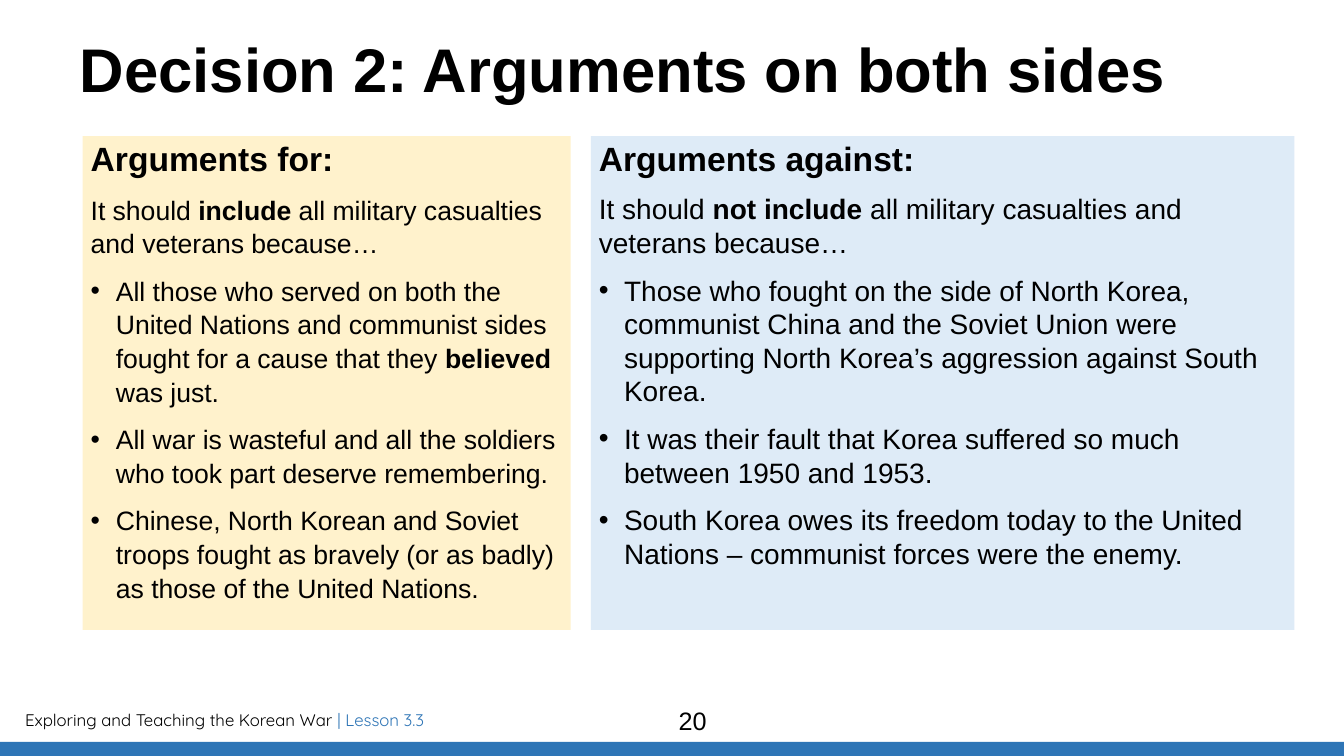
from lxml.etree import SubElement
from pptx import Presentation
from pptx.dml.color import RGBColor
from pptx.enum.shapes import MSO_SHAPE
from pptx.enum.text import MSO_ANCHOR, PP_ALIGN
from pptx.oxml.ns import qn
from pptx.util import Inches, Pt

WIDTH, HEIGHT = Inches(13.33), Inches(7.5)
COLORS = {"text": "000000", "accent": "2E75B6", "for": "FFF2CC", "against": "DEEBF7"}
PANEL_TOP, PANEL_HEIGHT = 18, 65.33
INDENT = Inches(0.25)

FOR_POINTS = [
    "All those who served on both the United Nations and communist sides fought "
    "for a cause that they *believed* was just.",
    "All war is wasteful and all the soldiers who took part deserve remembering.",
    "Chinese, North Korean and Soviet troops fought as bravely (or as badly) as "
    "those of the United Nations.",
]
AGAINST_POINTS = [
    "Those who fought on the side of North Korea, communist China and the Soviet "
    "Union were supporting North Korea’s aggression against South Korea.",
    "It was their fault that Korea suffered so much between 1950 and 1953.",
    "South Korea owes its freedom today to the United Nations – communist forces "
    "were the enemy.",
]


def share(x, y, w, h):
    """Turn percentages of the slide's width and height into lengths."""
    return [int(WIDTH * x / 100), int(HEIGHT * y / 100),
            int(WIDTH * w / 100), int(HEIGHT * h / 100)]


def add_run(p, text, size, font="Arial", color="text", bold=False):
    r = p.add_run()
    r.text = text
    r.font.size = Pt(size)
    r.font.name = font
    r.font.bold = bold
    r.font.color.rgb = RGBColor.from_string(COLORS[color])


def set_margins(tf, left, top, right, bottom):
    tf.margin_left, tf.margin_top = Inches(left), Inches(top)
    tf.margin_right, tf.margin_bottom = Inches(right), Inches(bottom)


def add_text_box(s, area):
    tf = s.shapes.add_textbox(*share(*area)).text_frame
    tf.word_wrap = True
    return tf


def add_rect(s, area, color):
    sp = s.shapes.add_shape(MSO_SHAPE.RECTANGLE, *share(*area))
    sp.shadow.inherit = False
    sp.fill.solid()
    sp.fill.fore_color.rgb = RGBColor.from_string(COLORS[color])
    sp.line.fill.background()
    return sp


def add_bullet(p):
    pPr = p._p.get_or_add_pPr()
    pPr.set("marL", str(INDENT))
    pPr.set("indent", str(-INDENT))
    SubElement(pPr, qn("a:buFont")).set("typeface", "Arial")
    SubElement(pPr, qn("a:buChar")).set("char", "•")


def add_panel(s, left, width, color, heading, intro, points, size):
    """Draw one side of the argument; words between asterisks are bold."""
    tf = add_rect(s, (left, PANEL_TOP, width, PANEL_HEIGHT), color).text_frame
    tf.word_wrap = True
    tf.vertical_anchor = MSO_ANCHOR.TOP
    set_margins(tf, 0.08, 0.08, 0.08, 0)
    for i, text in enumerate([f"*{heading}*", intro, *points]):
        p = tf.add_paragraph() if i else tf.paragraphs[0]
        if i > 1:
            add_bullet(p)
        p.alignment = PP_ALIGN.LEFT
        p.line_spacing = Pt(24)
        p.space_before = Pt(10 if i else 0)
        for j, part in enumerate(text.split("*")):
            if part:
                add_run(p, part, size if i else 24, bold=j % 2 == 1)


def add_title(s, text):
    tf = add_text_box(s, (5.93, 5.2, 86.27, 19.33))
    set_margins(tf, 0, 0, 0, 0)
    p = tf.paragraphs[0]
    p.line_spacing = 0.9
    add_run(p, text, 44, bold=True)


def add_footer(s, course, lesson, number):
    p = add_text_box(s, (1.13, 93.2, 58.66, 4)).paragraphs[0]
    add_run(p, course, 12, font="Quicksand")
    add_run(p, lesson, 12, font="Quicksand", color="accent")
    add_rect(s, (0, 98.13, 100, 1.87), "accent")
    p = add_text_box(s, (32.48, 92.67, 38.11, 5.33)).paragraphs[0]
    p.alignment = PP_ALIGN.CENTER
    add_run(p, number, 18)


def main():
    prs = Presentation()
    prs.slide_width, prs.slide_height = WIDTH, HEIGHT
    s = prs.slides.add_slide(prs.slide_layouts[6])
    add_footer(s, "Exploring and Teaching the Korean War ", "| Lesson 3.3", "20")
    add_title(s, "Decision 2: Arguments on both sides")
    add_panel(s, 6.15, 36.31, "for", "Arguments for:",
              "It should *include *all military casualties and veterans because…",
              FOR_POINTS, 19)
    add_panel(s, 43.96, 52.36, "against", "Arguments against:",
              "It should *not include *all military casualties and veterans because…",
              AGAINST_POINTS, 20)
    prs.save("out.pptx")


if __name__ == "__main__":
    main()
